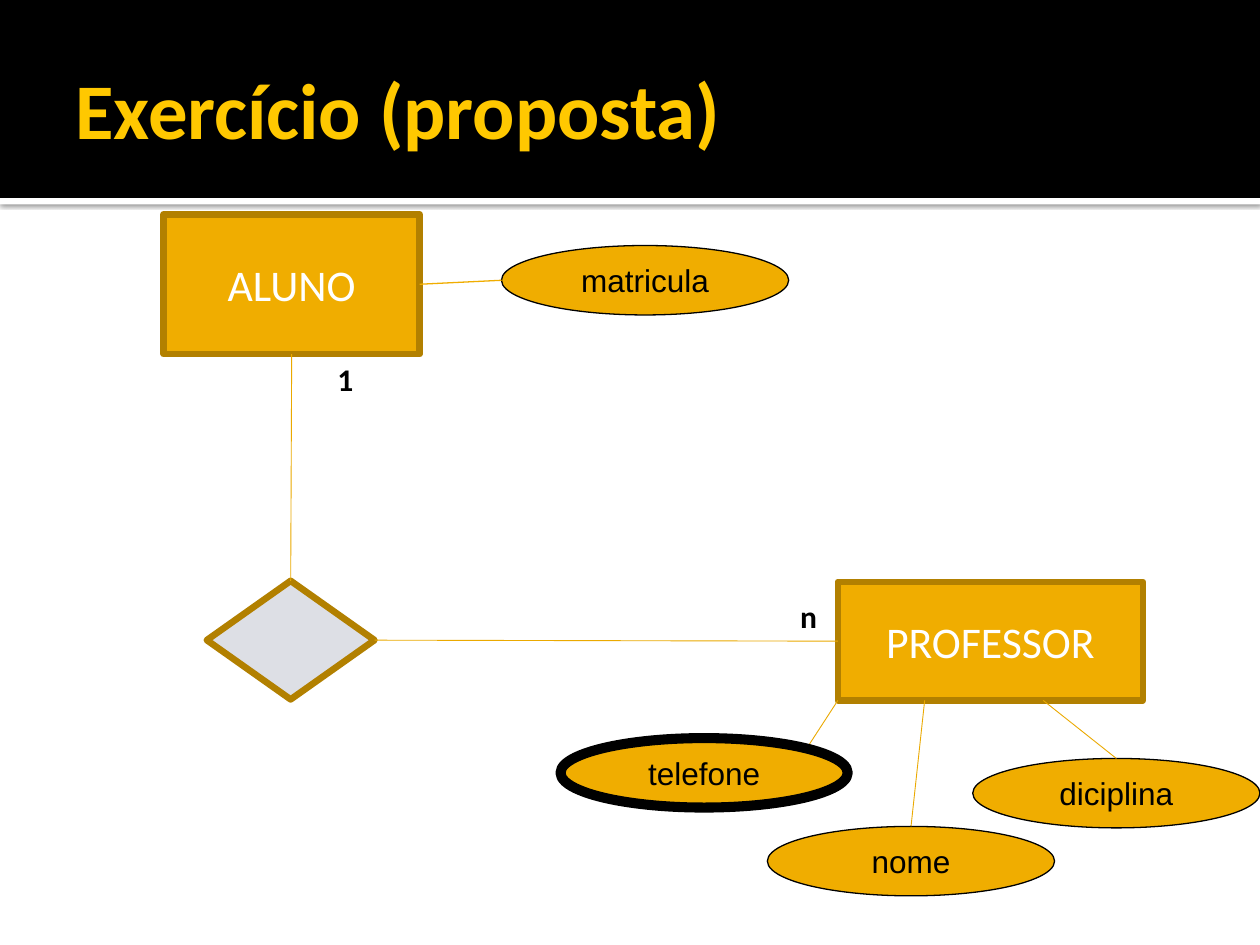
from lxml import etree
from pptx import Presentation
from pptx.dml.color import RGBColor
from pptx.enum.shapes import MSO_CONNECTOR, MSO_SHAPE
from pptx.enum.text import MSO_ANCHOR, MSO_AUTO_SIZE, PP_ALIGN
from pptx.oxml import parse_xml
from pptx.oxml.ns import nsdecls, qn
from pptx.util import Cm, Pt

RECT, OVAL, DIAMOND = MSO_SHAPE.RECTANGLE, MSO_SHAPE.OVAL, MSO_SHAPE.DIAMOND
STRAIGHT = MSO_CONNECTOR.STRAIGHT
MIDDLE = MSO_ANCHOR.MIDDLE
LEFT, CENTER = PP_ALIGN.LEFT, PP_ALIGN.CENTER
TOP_SIDE, LEFT_SIDE, BOTTOM_SIDE, RIGHT_SIDE = range(4)

COLORS = {
    "white": "FFFFFF",
    "black": "000000",
    "title": "FFC800",
    "amber": "F0AD00",
    "border": "B28000",
    "link": "EBA900",
    "relation": "DDDFE5",
}
ATTRIBUTE_W, ATTRIBUTE_H = 5.79, 1.4


def color(name):
    return RGBColor.from_string(COLORS[name])


def write(shape, text, size, font_name, font_color, align, bold=False):
    paragraph = shape.text_frame.paragraphs[0]
    paragraph.text = text
    paragraph.alignment = align
    font = paragraph.font
    font.size, font.name, font.bold = Pt(size), font_name, bold
    font.color.rgb = color(font_color)


def add_figure(slide, kind, box, fill, border=None, width=0):
    figure = slide.shapes.add_shape(kind, *map(Cm, box))
    figure.shadow.inherit = False
    figure.fill.solid()
    figure.fill.fore_color.rgb = color(fill)
    if border:
        figure.line.color.rgb = color(border)
        figure.line.width = Pt(width)
    else:
        figure.line.fill.background()
    return figure


def add_header(slide, box, text):
    """Black band over a white strip with a soft shadow, and the title."""
    left, top, width, height = box
    strip = add_figure(slide, RECT, (left, top + height, width, 0.13), "white")
    properties = strip.element.spPr
    properties.remove(properties.find(qn("a:effectLst")))
    properties.append(parse_xml(
        f'<a:effectLst {nsdecls("a")}><a:outerShdw blurRad="31750" dist="10160" '
        'dir="5400000" rotWithShape="0"><a:srgbClr val="000000">'
        '<a:alpha val="60000"/></a:srgbClr></a:outerShdw></a:effectLst>'))
    add_figure(slide, RECT, box, "black")

    title = slide.shapes.title
    title.element.getparent().append(title.element)
    title.left, title.top = Cm(left + 1.27), Cm(top + 0.43)
    title.width, title.height = Cm(width - 2.54), Cm(3.48)
    frame = title.text_frame
    frame.auto_size = MSO_AUTO_SIZE.NONE
    frame.word_wrap = True
    frame.vertical_anchor = MIDDLE
    frame.margin_left = Cm(0.25)
    frame.margin_right = frame.margin_top = frame.margin_bottom = Cm(0.13)
    write(title, text, 45, "Calibri", "title", LEFT, bold=True)


def add_entity(slide, box, text):
    entity = add_figure(slide, RECT, box, "amber", "border", 3.78)
    entity.text_frame.vertical_anchor = MIDDLE
    write(entity, text, 25, "Calibri", "white", CENTER)
    return entity


def add_attribute(slide, left, top, text, border_width=0.75):
    attribute = add_figure(slide, OVAL, (left, top, ATTRIBUTE_W, ATTRIBUTE_H),
                           "amber", "black", border_width)
    attribute.text_frame.word_wrap = False
    attribute.text_frame.vertical_anchor = MIDDLE
    write(attribute, text, 18, "Arial", "black", CENTER)
    return attribute


def add_cardinality(slide, left, top, text):
    label = slide.shapes.add_textbox(Cm(left), Cm(top), Cm(0.87), Cm(1.02))
    label.text_frame.word_wrap = False
    label.text_frame.auto_size = MSO_AUTO_SIZE.SHAPE_TO_FIT_TEXT
    write(label, text, 18, "Calibri", "black", LEFT, bold=True)


def add_link(slide, start, end, line_color="link", width=0.5):
    """Join two ends, each an (x, y) point or a (shape, side) pair."""
    link = slide.shapes.add_connector(STRAIGHT, 0, 0, 0, 0)
    if isinstance(start[0], (int, float)):
        link.begin_x, link.begin_y = map(Cm, start)
    else:
        link.begin_connect(*start)
    if isinstance(end[0], (int, float)):
        link.end_x, link.end_y = map(Cm, end)
    else:
        link.end_connect(*end)
    link.line.color.rgb = color(line_color)
    link.line.width = Pt(width)
    etree.SubElement(link.element.spPr, qn("a:effectLst"))


def add_student(slide, box):
    left, top, width, height = box
    student = add_entity(slide, box, "ALUNO")
    matricula_left, matricula_top = left + width + 1.65, top + 0.63
    add_attribute(slide, matricula_left, matricula_top, "matricula")
    add_link(slide, (matricula_left, matricula_top + ATTRIBUTE_H / 2),
             (student, RIGHT_SIDE), "amber", 0.75)
    add_cardinality(slide, left + 3.25, top + height, "1")
    return student


def add_teacher(slide, box):
    left, top, width, height = box
    bottom = top + height
    teacher = add_entity(slide, box, "PROFESSOR")
    add_cardinality(slide, left - 1.01, top + 0.18, "n")
    nome = add_attribute(slide, left - 1.42, bottom + 2.54, "nome")
    diciplina = add_attribute(slide, left + 2.72, bottom + 1.17, "diciplina")
    add_link(slide, (nome, TOP_SIDE), (left + 1.75, bottom))
    add_link(slide, (diciplina, TOP_SIDE), (left + 4.14, bottom))
    add_link(slide, (left - 0.63, bottom + 0.97), (left, bottom))
    add_attribute(slide, left - 5.59, bottom + 0.76, "telefone", border_width=5.75)
    return teacher


def add_relationship(slide, box, student, teacher):
    relation = add_figure(slide, DIAMOND, box, "relation", "border", 3.78)
    add_link(slide, (student, BOTTOM_SIDE), (relation, TOP_SIDE))
    add_link(slide, (relation, RIGHT_SIDE), (teacher, LEFT_SIDE))


def main():
    deck = Presentation()
    deck.slide_width, deck.slide_height = Cm(25.4), Cm(19.05)
    slide = deck.slides.add_slide(deck.slide_layouts[5])
    add_header(slide, (0, 0, 25.4, 3.99), "Exercício (proposta)")
    student = add_student(slide, (3.3, 4.32, 5.16, 2.82))
    teacher = add_teacher(slide, (16.89, 11.73, 6.15, 2.39))
    add_relationship(slide, (4.17, 11.71, 3.38, 2.39), student, teacher)
    deck.save("out.pptx")


if __name__ == "__main__":
    main()
